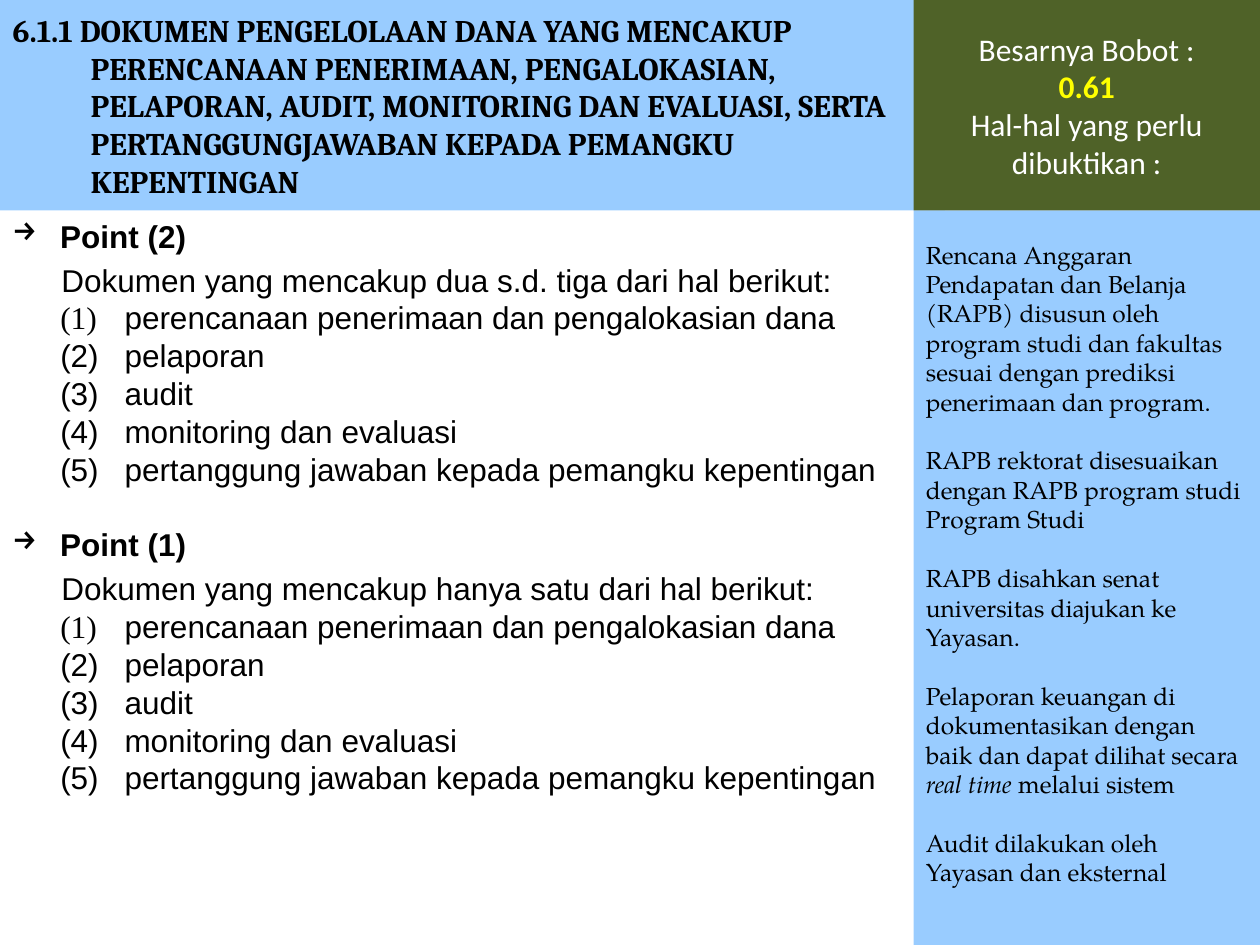
from lxml.etree import SubElement
from pptx import Presentation
from pptx.dml.color import RGBColor
from pptx.enum.shapes import MSO_SHAPE as Shape
from pptx.enum.text import MSO_ANCHOR as Anchor, MSO_AUTO_SIZE as AutoSize, PP_ALIGN as Align
from pptx.oxml.ns import qn
from pptx.util import Inches, Pt

SKY, OLIVE, WHITE, BLACK, YELLOW = "99CCFF", "4F6228", "FFFFFF", "000000", "FFFF00"
SPLIT, TOP, WIDTH, HEIGHT = 7.25, 1.67, 10, 7.5
ITEMS = [
    "perencanaan penerimaan dan pengalokasian dana",
    "pelaporan",
    "audit",
    "monitoring dan evaluasi",
    "pertanggung jawaban kepada pemangku kepentingan",
]
POINTS = [("Point (2)", "dua s.d. tiga"), ("Point (1)", "hanya satu")]
EVIDENCE = [
    [("Rencana Anggaran Pendapatan dan Belanja (RAPB) disusun oleh program studi dan "
      "fakultas sesuai dengan prediksi penerimaan dan program.", False)],
    [("RAPB rektorat disesuaikan dengan RAPB program studi Program Studi", False)],
    [("RAPB disahkan senat universitas diajukan ke Yayasan.", False)],
    [("Pelaporan keuangan di dokumentasikan dengan baik dan dapat dilihat secara ", False),
     ("real time ", True), ("melalui sistem", False)],
    [("Audit dilakukan oleh Yayasan dan eksternal", False)],
]


def color(value):
    """Turn a hex string into a colour."""
    return RGBColor.from_string(value)


class SlideBuilder:
    """Hold the text style and the current slide."""

    def __init__(self, deck, size=18, leading=1.2):
        """Add a title-only slide to the deck."""
        self.page = deck.slides.add_slide(deck.slide_layouts[5])
        self.size, self.leading = size, leading

    def frame(self, box, anchor):
        """Prepare the text frame of a box."""
        frame = box.text_frame
        frame.word_wrap = True
        frame.auto_size = AutoSize.NONE
        frame.vertical_anchor = anchor
        frame.margin_left = frame.margin_right = Inches(0.1)
        frame.margin_top = frame.margin_bottom = Inches(0.05)
        return frame

    def title(self, left, top, width, height, fill):
        """Move and fill the title placeholder."""
        box = self.page.shapes.title
        box.left, box.top = Inches(left), Inches(top)
        box.width, box.height = Inches(width), Inches(height)
        box.fill.solid()
        box.fill.fore_color.rgb = color(fill)
        return self.frame(box, Anchor.MIDDLE)

    def panel(self, left, top, width, height, fill):
        """Add a filled rectangle for text."""
        box = self.page.shapes.add_shape(
            Shape.RECTANGLE, Inches(left), Inches(top), Inches(width), Inches(height))
        box.shadow.inherit = False
        box.fill.solid()
        box.fill.fore_color.rgb = color(fill)
        box.line.fill.background()
        return self.frame(box, Anchor.MIDDLE)

    def text(self, left, top, width, height):
        """Add a plain text box."""
        box = self.page.shapes.add_textbox(
            Inches(left), Inches(top), Inches(width), Inches(height))
        return self.frame(box, Anchor.TOP)

    def para(self, frame, align=Align.LEFT, margin=0, indent=0, before=0, size=None, bullet=None):
        """Add a paragraph, using the empty first one if there is one."""
        first = frame.paragraphs[0]
        para = frame.add_paragraph() if first.runs else first
        para.alignment = align
        para.space_before = Pt(before)
        para.line_spacing = Pt((size or self.size) * self.leading)
        props = para._p.get_or_add_pPr()
        props.set("marL", str(Inches(margin)))
        props.set("indent", str(Inches(indent)))
        if bullet:
            SubElement(props, qn("a:buChar"), char=bullet)
        else:
            SubElement(props, qn("a:buNone"))
        return para

    def span(self, para, text, font, ink=BLACK, size=None, bold=False, italic=False):
        """Add a run of text."""
        span = para.add_run()
        span.text = text
        span.font.name = font
        span.font.size = Pt(size or self.size)
        span.font.bold, span.font.italic = bold, italic
        span.font.color.rgb = color(ink)


def main():
    """Build the slide and save it."""
    deck = Presentation()
    deck.slide_width, deck.slide_height = Inches(WIDTH), Inches(HEIGHT)
    slide = SlideBuilder(deck)

    heading = slide.title(0, 0, 7.5, TOP, SKY)
    para = slide.para(heading, margin=0.62, indent=-0.62)
    slide.span(para, "6.1.1 DOKUMEN PENGELOLAAN DANA YANG MENCAKUP PERENCANAAN PENERIMAAN, "
               "PENGALOKASIAN, PELAPORAN, AUDIT, MONITORING DAN EVALUASI, SERTA "
               "PERTANGGUNGJAWABAN KEPADA PEMANGKU KEPENTINGAN", "Cambria", bold=True)

    body = slide.text(0, TOP, 7.33, HEIGHT - TOP)
    for index, (point, count) in enumerate(POINTS):
        para = slide.para(body, margin=0.38, indent=-0.38, before=21.6 * index, bullet="→")
        slide.span(para, point, "Arial", bold=True)
        para = slide.para(body, margin=0.38, indent=0.01, before=3.6)
        slide.span(para, f"Dokumen yang mencakup {count} dari hal berikut:", "Arial")
        for number, item in enumerate(ITEMS, 1):
            para = slide.para(body, margin=0.89, indent=-0.51)
            slide.span(para, f"({number})\t", "Times New Roman" if number == 1 else "Arial")
            slide.span(para, item, "Arial")

    evidence = slide.panel(SPLIT, TOP, WIDTH - SPLIT, HEIGHT - TOP, SKY)
    evidence.margin_bottom = Inches(0.28)
    for index, spans in enumerate(EVIDENCE):
        para = slide.para(evidence, before=16.8 if index else 0, size=14)
        for text, italic in spans:
            slide.span(para, text, "TeX Gyre Pagella", size=14, italic=italic)

    weight = slide.panel(SPLIT, 0, WIDTH - SPLIT, TOP, OLIVE)
    for text, ink, bold in [("Besarnya Bobot :", WHITE, False), ("0.61", YELLOW, True),
                            ("Hal-hal yang perlu dibuktikan :", WHITE, False)]:
        para = slide.para(weight, align=Align.CENTER)
        slide.span(para, text, "Calibri", ink=ink, bold=bold)

    deck.save("out.pptx")


if __name__ == "__main__":
    main()
